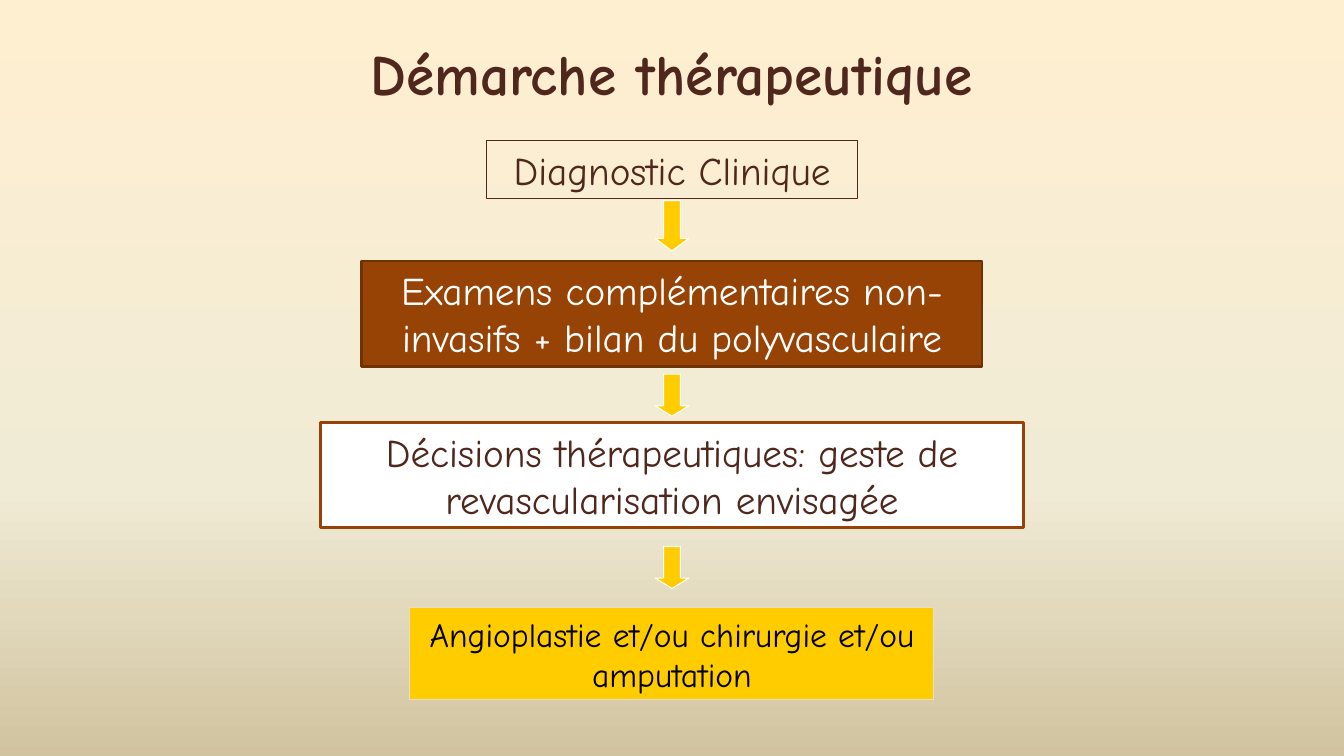
from copy import deepcopy
from pptx import Presentation
from pptx.dml.color import RGBColor
from pptx.enum import shapes, text
from pptx.util import Pt

FONT = "Comic Neue"
BROWN, RUST, GOLD, WHITE = "4F271C", "964305", "FFCC00", "FFFFFF"
WIDTH, HEIGHT = 960, 540
STEPS = [
    ("Diagnostic Clinique", 100.1, 264.5, 41.8, 28, BROWN, None, BROWN, 0.75),
    ("Examens complémentaires non-invasifs + bilan du polyvasculaire",
     186.5, 443, 75.2, 28, WHITE, RUST, "6F3204", 2),
    ("Décisions thérapeutiques: geste de revascularisation envisagée",
     301.7, 502, 75.4, 28, BROWN, WHITE, RUST, 2),
    ("Angioplastie et/ou chirurgie et/ou amputation",
     434.2, 374.4, 65.5, 24, "000000", GOLD, "E7DEC9", 0.75),
]
ARROWS = [(143.3, 36), (267.3, 30), (390.4, 30)]


def rgb(value):
    """Turn a hex string into a colour."""
    return RGBColor.from_string(value)


def background(s, stops):
    """Fill the slide with a top-to-bottom gradient."""
    fill = s.background.fill
    fill.gradient()
    fill.gradient_angle = 270
    gs = fill._fill._gradFill.gsLst
    gs.insert(1, deepcopy(gs[0]))
    for stop, (position, color) in zip(fill.gradient_stops, stops):
        stop.position = position
        stop.color.rgb = rgb(color)


def write(sp, words, size, color, bold=False, wrap=True):
    """Put one centred run into a shape."""
    tf = sp.text_frame
    tf.word_wrap = wrap
    tf.vertical_anchor = text.MSO_ANCHOR.MIDDLE
    p = tf.paragraphs[0]
    p.alignment = text.PP_ALIGN.CENTER
    r = p.add_run()
    r.text = words
    r.font.name, r.font.size, r.font.bold = FONT, Pt(size), bold
    r.font.color.rgb = rgb(color)


def block(s, kind, top, width, height, fill, line, weight):
    """Draw a shape centred across the slide."""
    sp = s.shapes.add_shape(kind, Pt((WIDTH - width) / 2), Pt(top), Pt(width), Pt(height))
    sp.shadow.inherit = False
    if fill:
        sp.fill.solid()
        sp.fill.fore_color.rgb = rgb(fill)
    else:
        sp.fill.background()
    sp.line.color.rgb = rgb(line)
    sp.line.width = Pt(weight)
    return sp


def title(s, words, left, top, width, height):
    """Write the slide title in its box."""
    sp = s.shapes.add_textbox(Pt(left), Pt(top), Pt(width), Pt(height))
    write(sp, words, 41, BROWN, bold=True)


def flow(s):
    """Draw the boxes of the flow and the arrows between them."""
    for words, top, width, height, size, color, fill, line, weight in STEPS:
        sp = block(s, shapes.MSO_SHAPE.RECTANGLE, top, width, height, fill, line, weight)
        write(sp, words, size, color, wrap=fill is not None)
    for top, height in ARROWS:
        sp = block(s, shapes.MSO_SHAPE.DOWN_ARROW, top, 24, height, GOLD, WHITE, 0.75)
        sp.adjustments[1] = 0.375 if height > 30 else 0.31


def main():
    """Build and save the slide."""
    prs = Presentation()
    prs.slide_width, prs.slide_height = Pt(WIDTH), Pt(HEIGHT)
    s = prs.slides.add_slide(prs.slide_layouts[6])
    background(s, [(0, "FFEFD1"), (0.65, "F0EBD5"), (1, "D1C39F")])
    title(s, "Démarche thérapeutique", 218, 6.5, 524, 90)
    flow(s)
    prs.save("out.pptx")


if __name__ == "__main__":
    main()
